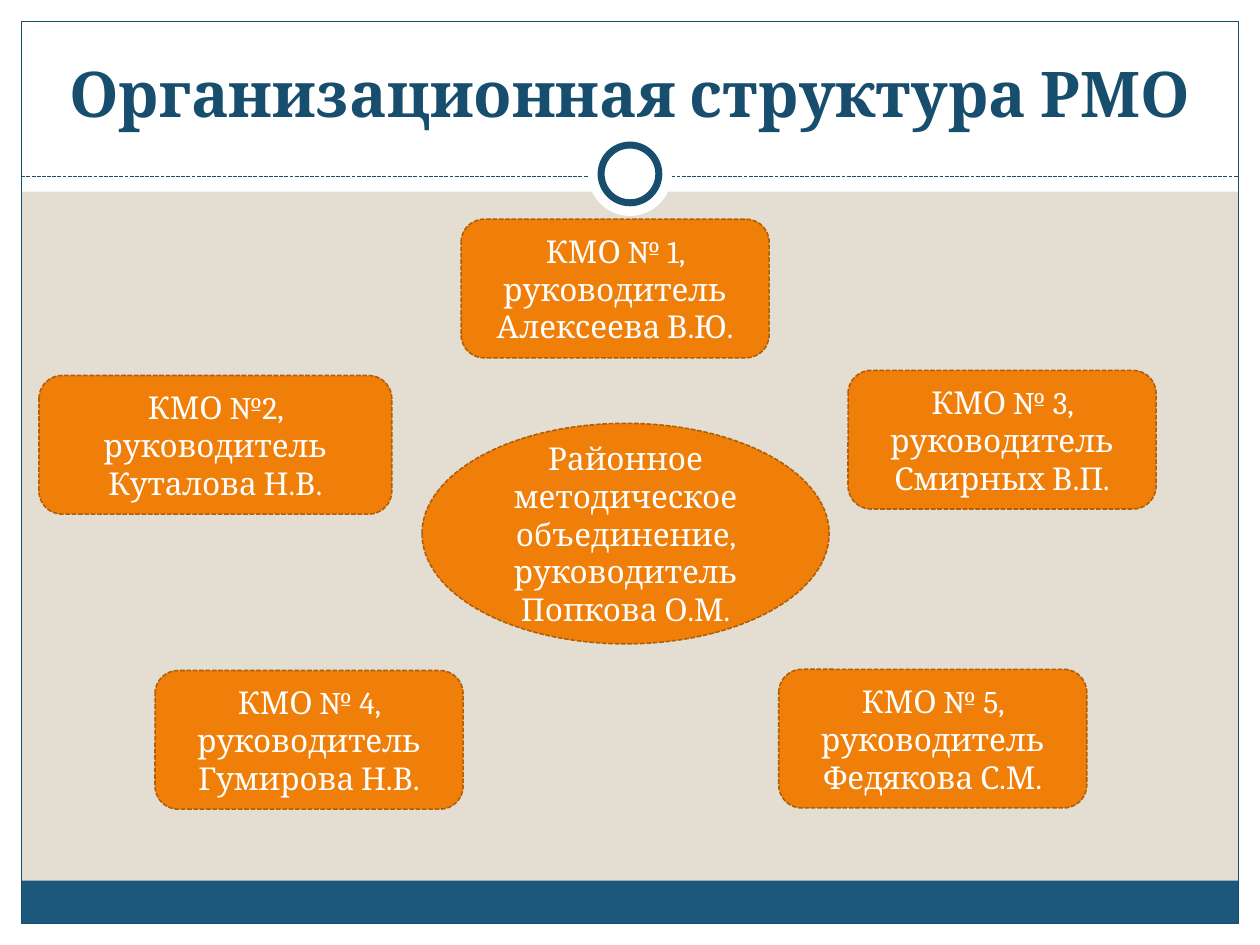
from pptx import Presentation
from pptx.dml.color import RGBColor
from pptx.enum.dml import MSO_LINE
from pptx.enum.shapes import MSO_CONNECTOR, MSO_SHAPE
from pptx.enum.text import MSO_ANCHOR, PP_ALIGN
from pptx.oxml.ns import qn
from pptx.util import Pt
from lxml import etree

RECT, ROUND, OVAL = MSO_SHAPE.RECTANGLE, MSO_SHAPE.ROUNDED_RECTANGLE, MSO_SHAPE.OVAL
DASH = MSO_LINE.SQUARE_DOT
STRAIGHT = MSO_CONNECTOR.STRAIGHT
CENTER = PP_ALIGN.CENTER
MIDDLE, BOTTOM = MSO_ANCHOR.MIDDLE, MSO_ANCHOR.BOTTOM

THEME = {
    "font": "Cambria", "title_size": 36, "body_size": 18,
    "paper": "E3DED1", "white": "FFFFFF", "navy": "184E6D", "band": "1B587C",
    "orange": "F07F09", "edge": "B25E07",
}

TITLE = "Организационная структура РМО"
CENTRE = ("Районное методическое объединение, руководитель Попкова О.М.", (241.2, 241.9, 232.6, 126))
GROUP_W, GROUP_H = 176, 79.2
GROUPS = [
    ("КМО № 1, руководитель Алексеева В.Ю.", 263.5, 125.3, GROUP_W),
    ("КМО №2, руководитель Куталова Н.В.", 22.3, 214.6, 201.6),
    ("КМО № 3, руководитель Смирных В.П.", 484.6, 211.7, GROUP_W),
    ("КМО № 4, руководитель Гумирова Н.В.", 88.6, 383.2, GROUP_W),
    ("КМО № 5, руководитель Федякова С.М.", 445, 382.5, GROUP_W),
]

W, H = 720, 540
MARGIN = 12.2
HEADER_H = 109.5
RULE_Y = 100.8
BAND_H = 24.5
RING_X, RING_Y = W / 2, 99.4


def colour(name):
    return RGBColor.from_string(THEME[name])


def set_line(line, name, width, dash=None):
    line.color.rgb = colour(name)
    line.width = Pt(width)
    if dash:
        line.dash_style = dash


def add_shape(s, kind, box, fill=None, line=None, width=0.75, dash=None):
    sp = s.shapes.add_shape(kind, *map(Pt, box))
    sp.shadow.inherit = False
    if fill:
        sp.fill.solid()
        sp.fill.fore_color.rgb = colour(fill)
    else:
        sp.fill.background()
    if line:
        set_line(sp.line, line, width, dash)
    else:
        sp.line.fill.background()
    return sp


def add_text(sp, text, size="body_size", color="white", bold=False, anchor=MIDDLE):
    tf = sp.text_frame
    tf.word_wrap = True
    tf.vertical_anchor = anchor
    p = tf.paragraphs[0]
    p.alignment = CENTER
    r = p.add_run()
    r.text = text
    r.font.name = THEME["font"]
    r.font.size = Pt(THEME[size])
    r.font.bold = bold
    r.font.color.rgb = colour(color)


def add_circle(s, diameter, **style):
    r = diameter / 2
    return add_shape(s, OVAL, (RING_X - r, RING_Y - r, diameter, diameter), "white", **style)


def add_node(s, kind, text, box):
    sp = add_shape(s, kind, box, "orange", "edge", 0.9, DASH)
    add_text(sp, text)


def add_frame(s):
    inner_w, inner_h = W - 2 * MARGIN, H - 2 * MARGIN
    for box in [
        (0, H - MARGIN, W, MARGIN),
        (0, 0, W, HEADER_H),
        (0, 0, MARGIN, H),
        (W - MARGIN, 0, MARGIN, H),
    ]:
        add_shape(s, RECT, box, "white")
    add_shape(s, RECT, (MARGIN, H - MARGIN - BAND_H, inner_w, BAND_H), "band")
    add_shape(s, RECT, (MARGIN, MARGIN, inner_w, inner_h), line="navy")
    rule = s.shapes.add_connector(STRAIGHT, Pt(MARGIN), Pt(RULE_Y), Pt(W - MARGIN), Pt(RULE_Y))
    set_line(rule.line, "navy", 0.75, DASH)
    etree.SubElement(rule._element.spPr, qn("a:effectLst"))
    add_circle(s, 48)
    add_circle(s, 33, line="navy", width=4)


def main():
    prs = Presentation()
    prs.slide_width, prs.slide_height = Pt(W), Pt(H)
    s = prs.slides.add_slide(prs.slide_layouts[6])
    s.background.fill.solid()
    s.background.fill.fore_color.rgb = colour("paper")
    add_frame(s)
    title = s.shapes.add_textbox(Pt(24), Pt(18), Pt(W - 48), Pt(60))
    add_text(title, TITLE, size="title_size", color="navy", bold=True, anchor=BOTTOM)
    add_node(s, OVAL, *CENTRE)
    for text, x, y, w in GROUPS:
        add_node(s, ROUND, text, (x, y, w, GROUP_H))
    prs.save("out.pptx")


if __name__ == "__main__":
    main()
